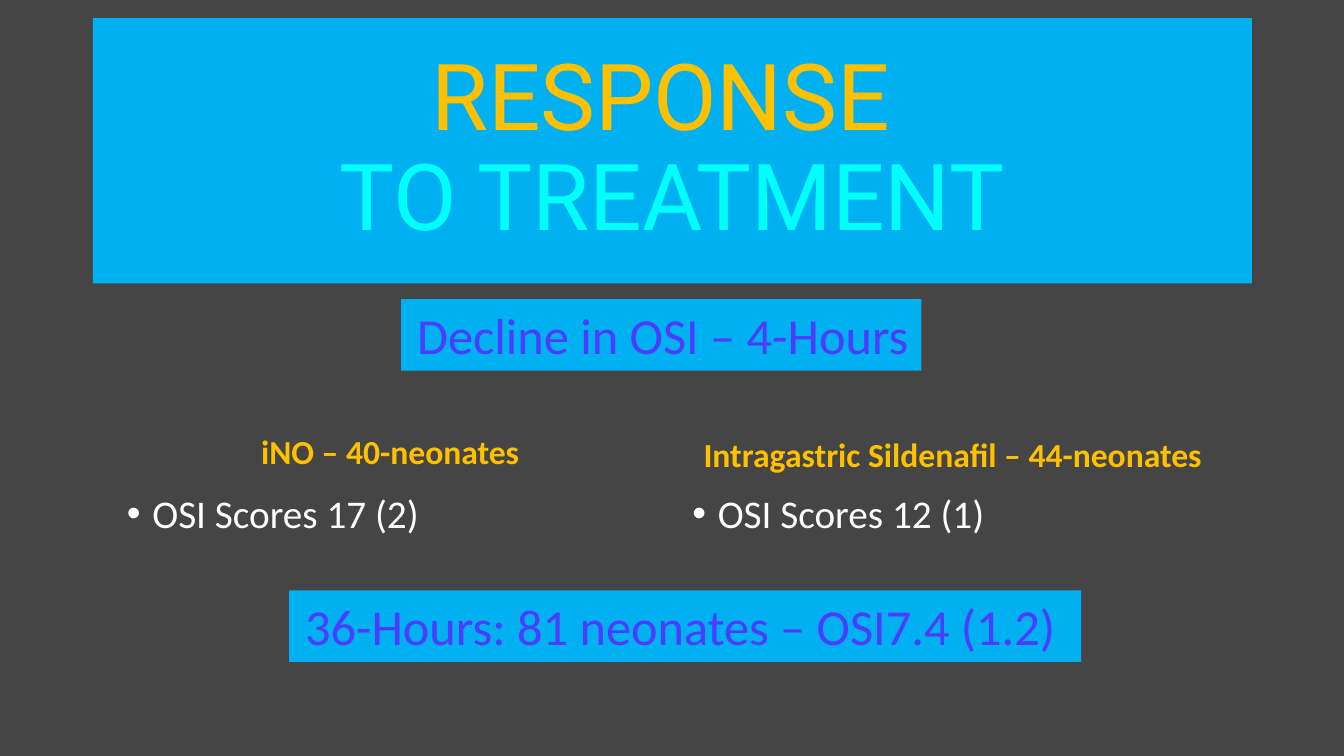
from dataclasses import dataclass

from lxml import etree
from pptx import Presentation, util as u
from pptx.dml.color import RGBColor
from pptx.enum import shapes, text
from pptx.oxml import ns


@dataclass(frozen=True)
class Theme:
    background: str = "454545"
    panel: str = "00B0F0"
    gold: str = "FFC000"
    cyan: str = "00FFFE"
    violet: str = "4C3DFE"
    white: str = "FFFFFF"
    title_font: str = "Roboto"
    body_font: str = "Calibri"
    title_size: int = 66
    banner_size: int = 36
    score_size: int = 28
    heading_size: int = 24


@dataclass(frozen=True)
class Box:
    """Left, top, width and height in centimetres."""
    left: float
    top: float
    width: float
    height: float

    def lengths(self) -> list[u.Cm]:
        return [u.Cm(v) for v in (self.left, self.top, self.width, self.height)]


@dataclass(frozen=True)
class Banner:
    wording: str
    box: Box


@dataclass(frozen=True)
class Treatment:
    heading: str
    heading_box: Box
    score: str
    score_box: Box


THEME = Theme()
TITLE_LINES = {"RESPONSE ": THEME.gold, "TO TREATMENT": THEME.cyan}
TITLE_BOX = Box(2.34, 0.46, 29.21, 6.68)
BANNERS = [
    Banner("Decline in OSI – 4-Hours", Box(10.11, 7.54, 13.11, 1.8)),
    Banner("36-Hours: 81 neonates – OSI7.4 (1.2)", Box(7.29, 14.88, 19.96, 1.8)),
]
TREATMENTS = [
    Treatment("iNO – 40-neonates", Box(2.67, 9.73, 14.33, 2.29),
              "OSI Scores 17 (2)", Box(2.95, 12.34, 14.33, 3.02)),
    Treatment("Intragastric Sildenafil – 44-neonates", Box(16.81, 9.8, 14.4, 2.29),
              "OSI Scores 12 (1)", Box(17.2, 12.34, 14.4, 3.02)),
]


def write(frame, wording: str, size: int, colour: str, font: str = THEME.body_font,
          align=text.PP_ALIGN.LEFT, spacing: float = 0.9, bold: bool = False):
    """Fill the frame with one paragraph, format its runs and return it."""
    frame.word_wrap = True
    paragraph = frame.paragraphs[0]
    paragraph.text = wording
    paragraph.alignment = align
    paragraph.line_spacing = spacing
    for run in paragraph.runs:
        run.font.name = font
        run.font.size = u.Pt(size)
        run.font.bold = bold
        run.font.color.rgb = RGBColor.from_string(colour)
    return paragraph


def add_bullet(paragraph) -> None:
    properties = paragraph._p.get_or_add_pPr()
    indent = u.Cm(0.64)
    properties.set("marL", str(indent))
    properties.set("indent", str(-indent))
    font = etree.SubElement(properties, ns.qn("a:buFont"))
    font.set("typeface", "Arial")
    bullet = etree.SubElement(properties, ns.qn("a:buChar"))
    bullet.set("char", "•")


def add_panel(slide, box: Box):
    panel = slide.shapes.add_shape(shapes.MSO_SHAPE.RECTANGLE, *box.lengths())
    panel.shadow.inherit = False
    panel.fill.solid()
    panel.fill.fore_color.rgb = RGBColor.from_string(THEME.panel)
    panel.line.fill.background()
    return panel.text_frame


def add_title(slide) -> None:
    frame = add_panel(slide, TITLE_BOX)
    frame.vertical_anchor = text.MSO_ANCHOR.MIDDLE
    title = write(frame, "\v".join(TITLE_LINES), THEME.title_size, THEME.gold,
                  THEME.title_font, text.PP_ALIGN.CENTER)
    for run, colour in zip(title.runs, TITLE_LINES.values()):
        run.font.color.rgb = RGBColor.from_string(colour)


def add_banner(slide, banner: Banner) -> None:
    frame = add_panel(slide, banner.box)
    frame.vertical_anchor = text.MSO_ANCHOR.TOP
    frame.margin_left = u.Cm(0.4)
    frame.margin_right = 0
    write(frame, banner.wording, THEME.banner_size, THEME.violet, spacing=1.0)


def add_treatment(slide, treatment: Treatment) -> None:
    heading = slide.shapes.add_textbox(*treatment.heading_box.lengths()).text_frame
    heading.vertical_anchor = text.MSO_ANCHOR.BOTTOM
    write(heading, treatment.heading, THEME.heading_size, THEME.gold,
          align=text.PP_ALIGN.CENTER, bold=True)
    score = slide.shapes.add_textbox(*treatment.score_box.lengths()).text_frame
    add_bullet(write(score, treatment.score, THEME.score_size, THEME.white))


def main() -> None:
    deck = Presentation()
    deck.slide_width, deck.slide_height = u.Cm(33.87), u.Cm(19.05)
    slide = deck.slides.add_slide(deck.slide_layouts[6])
    slide.background.fill.solid()
    slide.background.fill.fore_color.rgb = RGBColor.from_string(THEME.background)
    for treatment in TREATMENTS:
        add_treatment(slide, treatment)
    add_title(slide)
    for banner in BANNERS:
        add_banner(slide, banner)
    deck.save("out.pptx")


if __name__ == "__main__":
    main()
